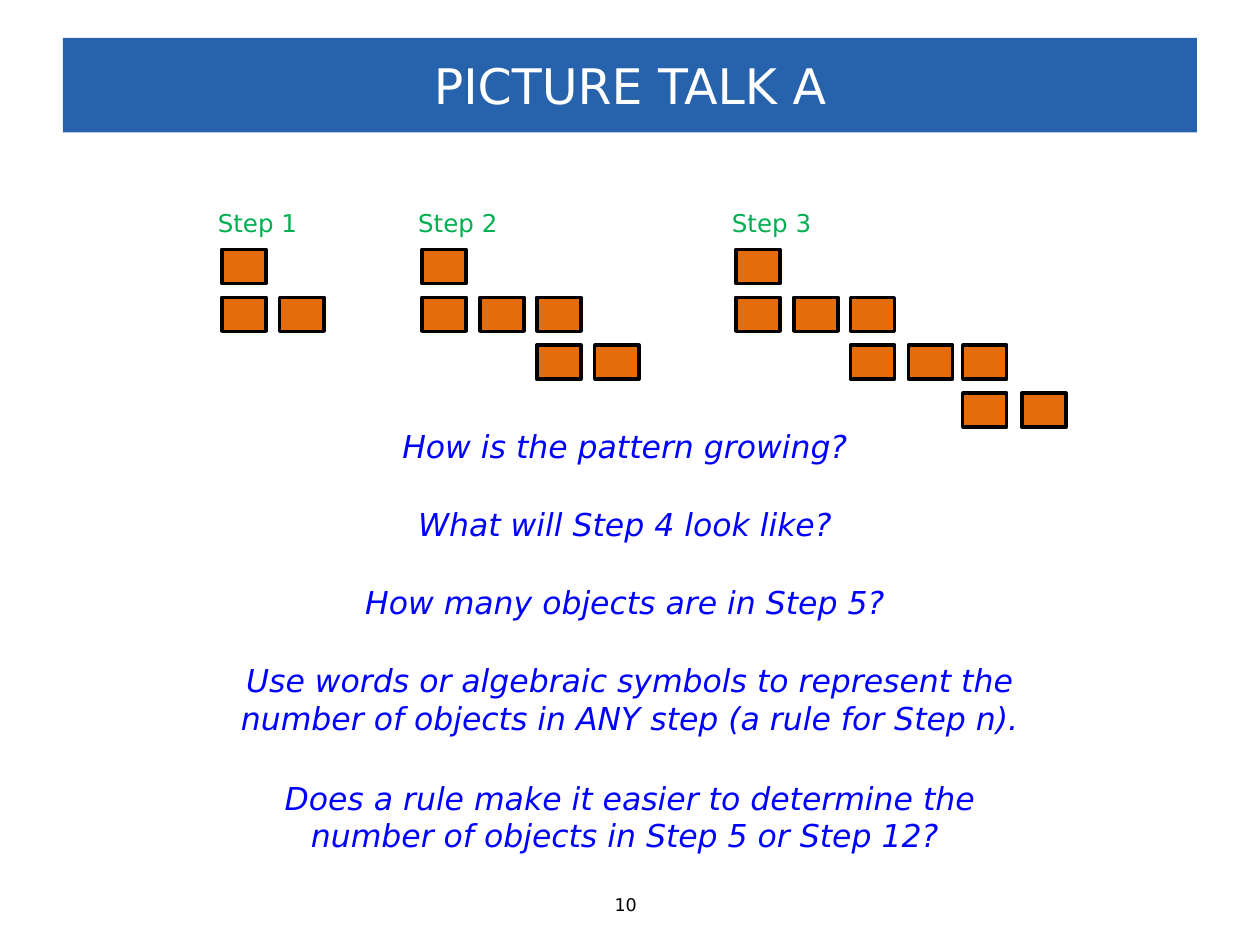
from pptx import Presentation
from pptx.dml.color import RGBColor
from pptx.enum.shapes import MSO_SHAPE as Shape
from pptx.enum.text import MSO_ANCHOR as Anchor, PP_ALIGN as Align
from pptx.util import Inches, Pt

COLORS = {"banner": "2762AD", "white": "FFFFFF", "question": "0000FF",
          "tile": "E46C0A", "black": "000000", "step": "00B050"}
FONT = "DejaVu Sans"
SLIDE_WIDTH = 10

# Left edges of the tile columns and the row pitch, relative to the first tile
COLUMNS = [0, 0.46, 0.91, 1.37, 1.8, 2.27]
ROW_PITCH = 0.38
TILE_WIDTH, TILE_HEIGHT = 0.35, 0.27

STEPS = [(1, 1.63), (2, 3.22), (3, 5.71)]
STEPS_TOP = 1.6

# Wording, box width, box height
QUESTIONS = [
    ("How is the pattern growing? ", 4.07, 0.4),
    ("What will Step 4 look like? ", 3.79, 0.4),
    ("How many objects are in Step 5? ", 4.47, 0.4),
    ("Use words or algebraic symbols to represent the number of objects "
     "in ANY step (a rule for Step n).", 6.7, 0.71),
    ("Does a rule make it easier to determine the number of objects "
     "in Step 5 or Step 12? ", 5.83, 0.71),
]
QUESTIONS_TOP = 3.34
QUESTION_GAP = 0.22


def color(name):
    return RGBColor.from_string(COLORS[name])


def write(shape, text, size, color_name, align=Align.CENTER, italic=False, wrap=True):
    frame = shape.text_frame
    frame.text = text
    frame.word_wrap = wrap
    paragraph = frame.paragraphs[0]
    paragraph.alignment = align
    font = paragraph.runs[0].font
    font.name, font.size, font.italic = FONT, Pt(size), italic
    font.color.rgb = color(color_name)


def add_rectangle(shapes, left, top, width, height, fill):
    rectangle = shapes.add_shape(Shape.RECTANGLE, Inches(left), Inches(top),
                                 Inches(width), Inches(height))
    rectangle.shadow.inherit = False
    rectangle.fill.solid()
    rectangle.fill.fore_color.rgb = color(fill)
    return rectangle


def add_text(shapes, left, top, width, height, *args, **kwargs):
    box = shapes.add_textbox(Inches(left), Inches(top), Inches(width), Inches(height))
    write(box, *args, **kwargs)


def add_title(slide, left, top, width, height):
    banner = add_rectangle(slide.shapes, left, top, width, height, "banner")
    banner.line.fill.background()
    banner.text_frame.vertical_anchor = Anchor.MIDDLE
    write(banner, "PICTURE TALK A", 28, "white")


def staircase(step):
    """Yield (row, column) of each tile: every row starts under the end of the one above."""
    yield 0, 0
    for row in range(1, step + 1):
        first = 2 * (row - 1)
        last = first + (1 if row == step else 2)
        for column in range(first, last + 1):
            yield row, column


def add_step(slide, left, top, step):
    group = slide.shapes.add_group_shape()
    for row, column in staircase(step):
        tile = add_rectangle(group.shapes, left + 0.13 + COLUMNS[column],
                             top + 0.38 + row * ROW_PITCH,
                             TILE_WIDTH, TILE_HEIGHT, "tile")
        tile.line.color.rgb = color("black")
        tile.line.width = Pt(2)
    add_text(group.shapes, left, top, 0.88, 0.34, f"Step {step}", 14, "step",
             align=Align.LEFT)


def add_questions(slide, center, top):
    for question, width, height in QUESTIONS:
        add_text(slide.shapes, center - width / 2, top, width, height,
                 question, 18, "question", italic=True)
        top += height + QUESTION_GAP


def main():
    deck = Presentation()
    deck.slide_width, deck.slide_height = Inches(SLIDE_WIDTH), Inches(7.5)
    slide = deck.slides.add_slide(deck.slide_layouts[6])
    add_title(slide, 0.5, 0.3, 9, 0.75)
    add_questions(slide, SLIDE_WIDTH / 2, QUESTIONS_TOP)
    for step, left in STEPS:
        add_step(slide, left, STEPS_TOP, step)
    add_text(slide.shapes, 4.78, 7.05, 0.44, 0.27, "10", 10, "black",
             align=Align.LEFT, wrap=False)
    deck.save("out.pptx")


if __name__ == "__main__":
    main()
